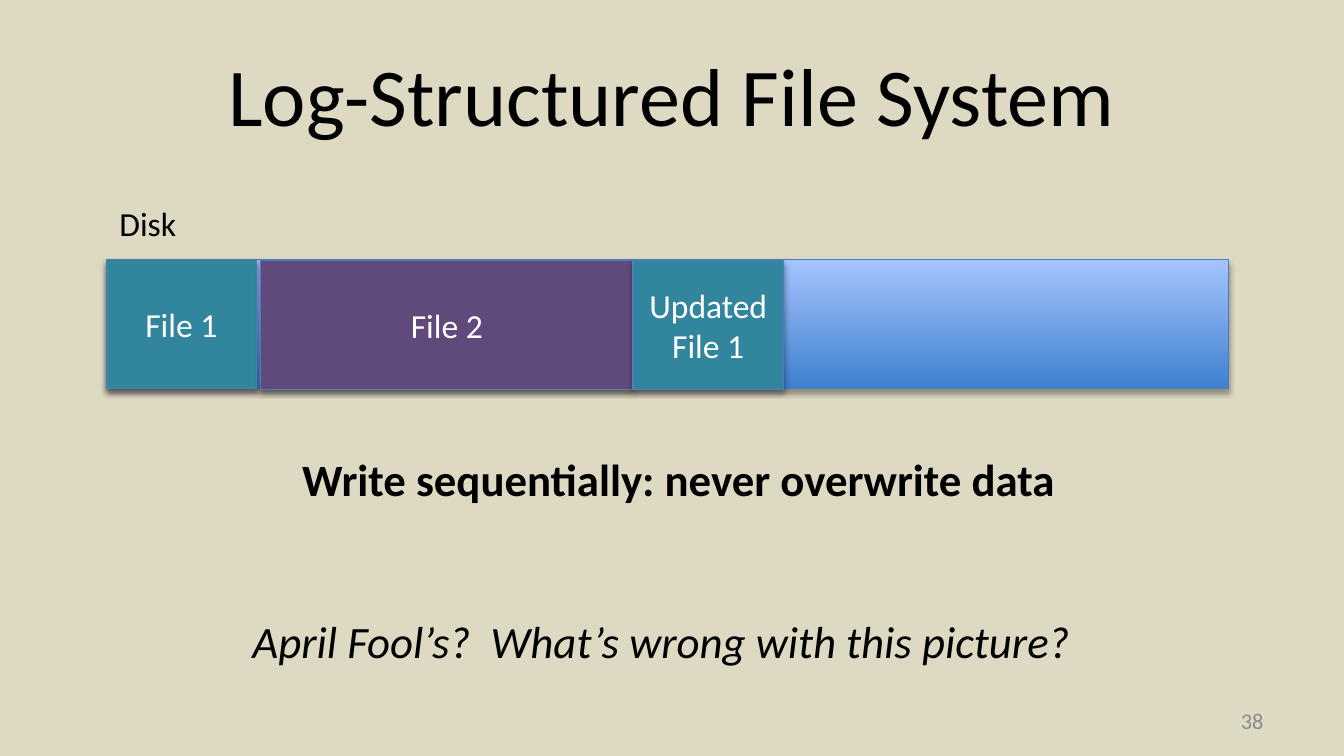
import pptx
import pptx.util
import pptx.dml.color
import pptx.enum.shapes
import pptx.enum.text
import pptx.oxml
import pptx.oxml.ns
from pptx.util import Inches

ALIGN = pptx.enum.text.PP_ALIGN
MIDDLE = pptx.enum.text.MSO_ANCHOR.MIDDLE
DISK_LEFT, DISK_TOP, DISK_HEIGHT = 0.79, 1.93, 0.96
TEAL, PURPLE = "31859C", "604A7B"


def color(hex_value):
    return pptx.dml.color.RGBColor.from_string(hex_value)


def add_line(paragraph, text, size, text_color="000000", align=None,
             bold=False, italic=False):
    paragraph.alignment = align
    run = paragraph.add_run()
    run.text = text
    run.font.name = "Calibri"
    run.font.size = pptx.util.Pt(size)
    run.font.color.rgb = color(text_color)
    run.font.bold = bold
    run.font.italic = italic


def add_shadow(shape):
    shape.shadow.inherit = False
    effects = shape._element.spPr.find(pptx.oxml.ns.qn("a:effectLst"))
    effects.append(pptx.oxml.parse_xml(
        f'<a:outerShdw {pptx.oxml.ns.nsdecls("a")} blurRad="40000" '
        'dist="23000" dir="5400000" rotWithShape="0">'
        '<a:srgbClr val="000000"><a:alpha val="35000"/></a:srgbClr>'
        '</a:outerShdw>'))


def add_block(slide, left, top, width, lines=(), fill=None):
    block = slide.shapes.add_shape(
        pptx.enum.shapes.MSO_SHAPE.RECTANGLE,
        Inches(left), Inches(top), Inches(width), Inches(DISK_HEIGHT))
    if fill:
        block.fill.solid()
        block.fill.fore_color.rgb = color(fill)
    else:
        # Free space runs from dark at the bottom to light at the top
        block.fill.gradient()
        block.fill.gradient_angle = 90
        for stop, shade in zip(block.fill.gradient_stops, ("3F80CE", "A4C4FF")):
            stop.color.rgb = color(shade)
    block.line.color.rgb = color("4B7EBC")
    block.line.width = pptx.util.Pt(0.75)
    add_shadow(block)
    frame = block.text_frame
    frame.vertical_anchor = MIDDLE
    for index, text in enumerate(lines):
        paragraph = frame.add_paragraph() if index else frame.paragraphs[0]
        add_line(paragraph, text, 18, "FFFFFF", ALIGN.CENTER)


def add_label(slide, left, top, width, height, text, size, **style):
    label = slide.shapes.add_textbox(
        Inches(left), Inches(top), Inches(width), Inches(height))
    label.text_frame.word_wrap = False
    label.text_frame.auto_size = pptx.enum.text.MSO_AUTO_SIZE.SHAPE_TO_FIT_TEXT
    add_line(label.text_frame.paragraphs[0], text, size, **style)


def add_title(slide, text):
    title = slide.shapes.title
    title.left, title.top = Inches(0.5), Inches(0.23)
    title.width, title.height = Inches(9), Inches(0.94)
    title.text_frame.vertical_anchor = MIDDLE
    add_line(title.text_frame.paragraphs[0], text, 44, align=ALIGN.CENTER)


def add_page_number(slide, number):
    page = slide.shapes.add_textbox(
        Inches(7.17), Inches(5.21), Inches(2.33), Inches(0.3))
    page.text_frame.word_wrap = True
    page.text_frame.vertical_anchor = MIDDLE
    add_line(page.text_frame.paragraphs[0], number, 12, "8C8C8C", ALIGN.RIGHT)


def main():
    deck = pptx.Presentation()
    # Widescreen, 16:9
    deck.slide_width = Inches(10)
    deck.slide_height = Inches(10) * 9 // 16
    slide = deck.slides.add_slide(deck.slide_layouts[5])
    slide.background.fill.solid()
    slide.background.fill.fore_color.rgb = color("DDD9C3")

    add_title(slide, "Log-Structured File System")
    add_page_number(slide, "38")

    # Disk with the files written to it in order
    add_block(slide, DISK_LEFT, DISK_TOP, 8.35)
    add_block(slide, DISK_LEFT, DISK_TOP, 1.12, ["File 1"], TEAL)
    add_block(slide, 1.94, 1.94, 2.77, ["File 2"], PURPLE)
    add_block(slide, 4.71, 1.94, 1.12, ["Updated", "File 1"], TEAL)
    add_label(slide, DISK_LEFT, 1.46, 0.63, 0.4, "Disk", 18)

    # Principle and question
    add_label(slide, 2.15, 3.31, 5.89, 0.5,
              "Write sequentially: never overwrite data", 24, bold=True)
    add_label(slide, 1.78, 4.52, 6.46, 0.5,
              "April Fool’s?  What’s wrong with this picture?", 24, italic=True)

    deck.save("out.pptx")


if __name__ == "__main__":
    main()
